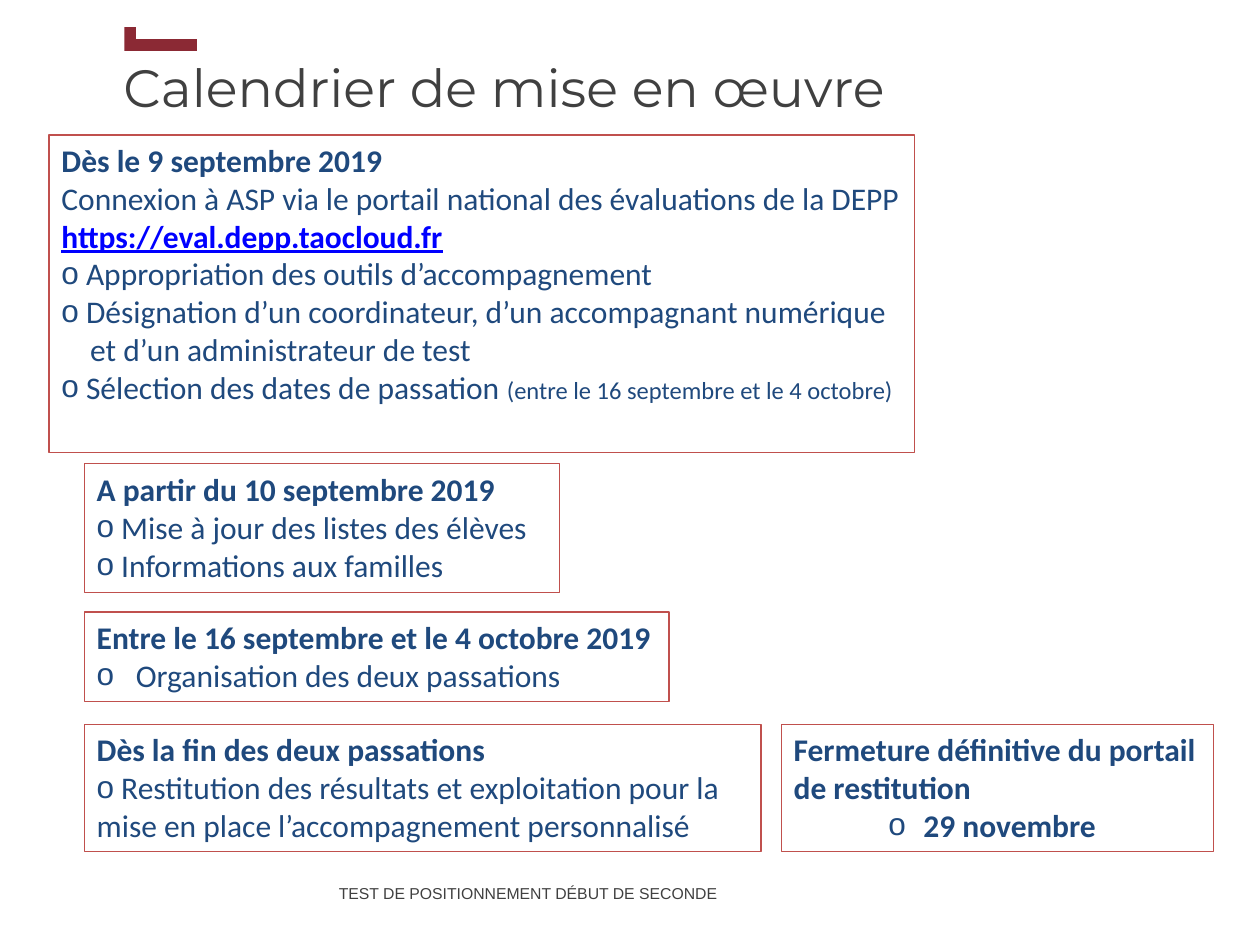
from lxml import etree
from pptx import Presentation
from pptx import util as u
from pptx.dml.color import RGBColor
from pptx.enum import shapes, text
from pptx.oxml.ns import qn

NAVY, RED, BURGUNDY, GREY = "1F497D", "C0504D", "8B2934", "404040"
BODY = {"name": "Calibri", "size": u.Pt(18), "color": NAVY}
BOLD = {"bold": True}
LINK = {"bold": True, "underline": True, "color": "0000FF"}
SMALL = {"size": u.Pt(14)}


def color(hex_value):
    return RGBColor.from_string(hex_value)


def lengths(*values):
    return [u.Cm(value) for value in values]


def add_run(paragraph, words, formats):
    run = paragraph.add_run()
    run.text = words
    for name, value in formats.items():
        if name == "color":
            run.font.color.rgb = color(value)
        else:
            setattr(run.font, name, value)


def set_bullet(paragraph, margin=0.0, indent=0.0):
    properties = paragraph._p.get_or_add_pPr()
    properties.set("marL", str(u.Cm(margin)))
    properties.set("indent", str(u.Cm(indent)))
    etree.SubElement(properties, qn("a:buFont")).set("typeface", "Arial")
    etree.SubElement(properties, qn("a:buChar")).set("char", "o")


def add_label(slide, place, words, anchor, formats):
    frame = slide.shapes.add_textbox(*lengths(*place)).text_frame
    frame.word_wrap = True
    frame.vertical_anchor = anchor
    add_run(frame.paragraphs[0], words, formats)


def add_rectangle(slide, place, fill, line=None):
    shape = slide.shapes.add_shape(shapes.MSO_SHAPE.RECTANGLE, *lengths(*place))
    shape.shadow.inherit = False
    shape.fill.solid()
    shape.fill.fore_color.rgb = color(fill)
    if line:
        shape.line.color.rgb = color(line)
        shape.line.width = u.Pt(0.75)
    else:
        shape.line.fill.background()
    return shape


def add_step(slide, place, heading, items):
    """Each item is (kind, runs); a kind may be "plain", "continued" or bullet indents."""
    frame = add_rectangle(slide, place, "FFFFFF", RED).text_frame
    frame.word_wrap = True
    frame.vertical_anchor = text.MSO_ANCHOR.TOP
    for index, (kind, runs) in enumerate([("plain", [(heading, BOLD)])] + items):
        paragraph = frame.add_paragraph() if index else frame.paragraphs[0]
        paragraph.alignment = text.PP_ALIGN.LEFT
        if kind == "continued":
            paragraph._p.get_or_add_pPr().set("marL", str(u.Cm(0.58)))
        elif kind == "centered":
            paragraph.alignment = text.PP_ALIGN.CENTER
            set_bullet(paragraph, 0.5, -0.71)
        elif kind == "hanging":
            set_bullet(paragraph, 0.79, -0.79)
        elif kind == "bullet":
            set_bullet(paragraph)
        for words, formats in runs:
            add_run(paragraph, words, {**BODY, **formats})


def main():
    presentation = Presentation()
    presentation.slide_width, presentation.slide_height = lengths(25.4, 19.05)
    slide = presentation.slides.add_slide(presentation.slide_layouts[6])

    # Footer, title and corner mark
    add_label(slide, (6.58, 17.07, 9.86, 1.88),
              "TEST DE POSITIONNEMENT DÉBUT DE SECONDE", text.MSO_ANCHOR.MIDDLE,
              {"name": "Arial", "size": u.Pt(9), "color": GREY})
    add_label(slide, (2.24, 0.2, 22.23, 2.31),
              "Calendrier de mise en œuvre", text.MSO_ANCHOR.BOTTOM,
              {"name": "Montserrat", "size": u.Pt(30), "color": GREY})
    for place in ((2.51, 0.55, 0.23, 0.48), (2.6, 0.79, 1.37, 0.24)):
        add_rectangle(slide, place, BURGUNDY)

    # Calendar steps
    add_step(slide, (0.99, 2.72, 17.45, 6.4), "Dès le 9 septembre 2019", [
        ("plain", [("Connexion à ASP via le portail national des évaluations de la DEPP ", {}),
                   ("https://eval.depp.taocloud.fr", LINK)]),
        ("bullet", [(" Appropriation des outils d’accompagnement", {})]),
        ("bullet", [(" Désignation d’un coordinateur, d’un accompagnant numérique", {})]),
        ("continued", [("et d’un administrateur de test", {})]),
        ("bullet", [(" Sélection des dates de passation ", {}),
                    ("(entre le 16 septembre et le 4 octobre)", SMALL)]),
    ])
    add_step(slide, (1.7, 9.35, 9.58, 2.59), "A partir du 10 septembre 2019", [
        ("bullet", [(" Mise à jour des listes des élèves", {})]),
        ("bullet", [(" Informations aux familles", {})]),
    ])
    add_step(slide, (1.7, 12.34, 11.79, 1.8), "Entre le 16 septembre et le 4 octobre 2019", [
        ("hanging", [("Organisation des deux passations", {})]),
    ])
    add_step(slide, (1.7, 14.6, 13.64, 2.57), "Dès la fin des deux passations", [
        ("bullet", [(" Restitution des résultats et exploitation pour la "
                     "mise en place l’accompagnement personnalisé", {})]),
    ])
    add_step(slide, (15.75, 14.6, 8.71, 2.57), "Fermeture définitive du portail de restitution", [
        ("centered", [("29 novembre", BOLD)]),
    ])

    presentation.save("out.pptx")


if __name__ == "__main__":
    main()
